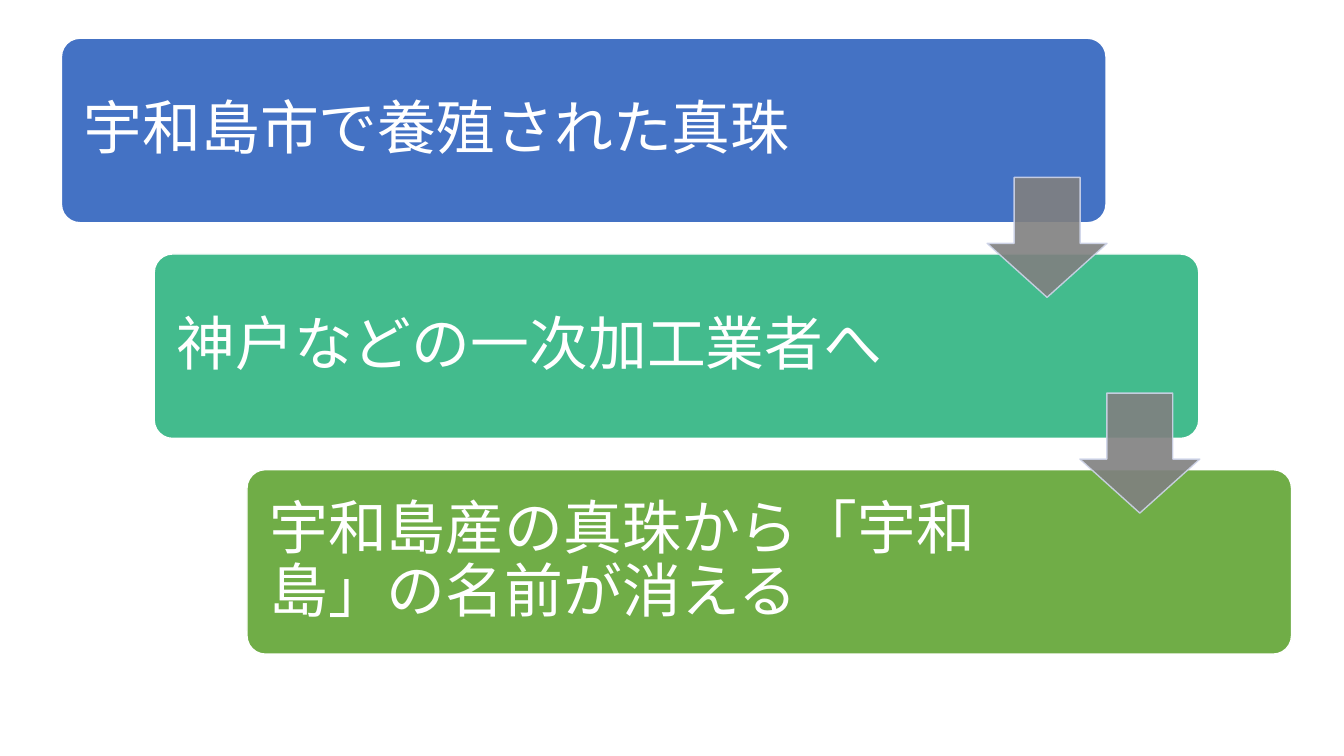
from dataclasses import dataclass

from lxml import etree
from pptx import Presentation
from pptx.dml.color import RGBColor
from pptx.enum.shapes import MSO_SHAPE
from pptx.enum.text import MSO_ANCHOR, PP_ALIGN
from pptx.oxml.ns import qn
from pptx.shapes.autoshape import Shape
from pptx.slide import Slide
from pptx.util import Inches, Pt

ROUNDED = MSO_SHAPE.ROUNDED_RECTANGLE
DOWN_ARROW = MSO_SHAPE.DOWN_ARROW
MIDDLE = MSO_ANCHOR.MIDDLE
LEFT = PP_ALIGN.LEFT

FONT = "Noto Sans CJK JP"
COLORS = {
    "blue": "4472C4",
    "teal": "43BB8D",
    "green": "70AD47",
    "white": "FFFFFF",
    "arrow": "808080",
    "arrow_line": "CFD5EA",
}

# Staircase geometry, in inches
FIRST_X, FIRST_Y = 0.61, 0.38
STEP_X, STEP_Y = 0.92, 2.14
BOX_W, BOX_H = 10.36, 1.83
TEXT_PAD = 0.05
TEXT_INSET = 0.17
ARROW_DX, ARROW_DY = 9.18, 1.38
ARROW_SIZE = 1.19


@dataclass(frozen=True)
class Stage:
    text: str
    color: str
    text_w: float


STAGES = [
    Stage("宇和島市で養殖された真珠", "blue", 8.38),
    Stage("神戸などの一次加工業者へ", "teal", 8.15),
    Stage("宇和島産の真珠から「宇和島」の名前が消える", "green", 8.15),
]


def rgb(name: str) -> RGBColor:
    return RGBColor.from_string(COLORS[name])


def stage_origin(index: int) -> tuple[float, float]:
    return FIRST_X + index * STEP_X, FIRST_Y + index * STEP_Y


def style_shape(sp: Shape, fill: str, line: str) -> None:
    sp.shadow.inherit = False
    sp.fill.solid()
    sp.fill.fore_color.rgb = rgb(fill)
    sp.line.color.rgb = rgb(line)
    sp.line.width = Pt(1)


def add_stage(slide: Slide, index: int, stage: Stage) -> None:
    x, y = stage_origin(index)
    sp = slide.shapes.add_shape(
        ROUNDED, Inches(x), Inches(y), Inches(BOX_W), Inches(BOX_H))
    sp.adjustments[0] = 0.1
    style_shape(sp, stage.color, "white")

    box = slide.shapes.add_textbox(
        Inches(x + TEXT_PAD), Inches(y + TEXT_PAD),
        Inches(stage.text_w), Inches(BOX_H - 2 * TEXT_PAD))
    tf = box.text_frame
    tf.word_wrap = True
    tf.vertical_anchor = MIDDLE
    tf.margin_left = tf.margin_right = Inches(TEXT_INSET)
    tf.margin_top = tf.margin_bottom = Inches(TEXT_INSET)

    p = tf.paragraphs[0]
    p.text = stage.text
    p.alignment = LEFT
    p.line_spacing = 0.9
    p.space_after = Pt(15)
    p.font.size = Pt(42)
    p.font.color.rgb = rgb("white")
    p.font.name = FONT
    # Japanese glyphs take the East Asian typeface
    for latin in p._p.iter(qn("a:latin")):
        ea = etree.Element(qn("a:ea"), typeface=FONT)
        latin.addnext(ea)


def add_arrow(slide: Slide, index: int) -> None:
    """Draw the arrow leading from one stage down to the next."""
    x, y = stage_origin(index)
    sp = slide.shapes.add_shape(
        DOWN_ARROW, Inches(x + ARROW_DX), Inches(y + ARROW_DY),
        Inches(ARROW_SIZE), Inches(ARROW_SIZE))
    sp.adjustments[0] = 0.55
    sp.adjustments[1] = 0.45
    style_shape(sp, "arrow", "arrow_line")
    # 90 % opacity on both fill and outline
    for color in sp._element.spPr.iter(qn("a:srgbClr")):
        etree.SubElement(color, qn("a:alpha"), val="90000")


def main() -> None:
    prs = Presentation()
    prs.slide_width = Inches(13.33)
    prs.slide_height = Inches(7.5)
    slide = prs.slides.add_slide(prs.slide_layouts[6])

    for index, stage in enumerate(STAGES):
        add_stage(slide, index, stage)
    for index in range(len(STAGES) - 1):
        add_arrow(slide, index)

    prs.save("out.pptx")


if __name__ == "__main__":
    main()
